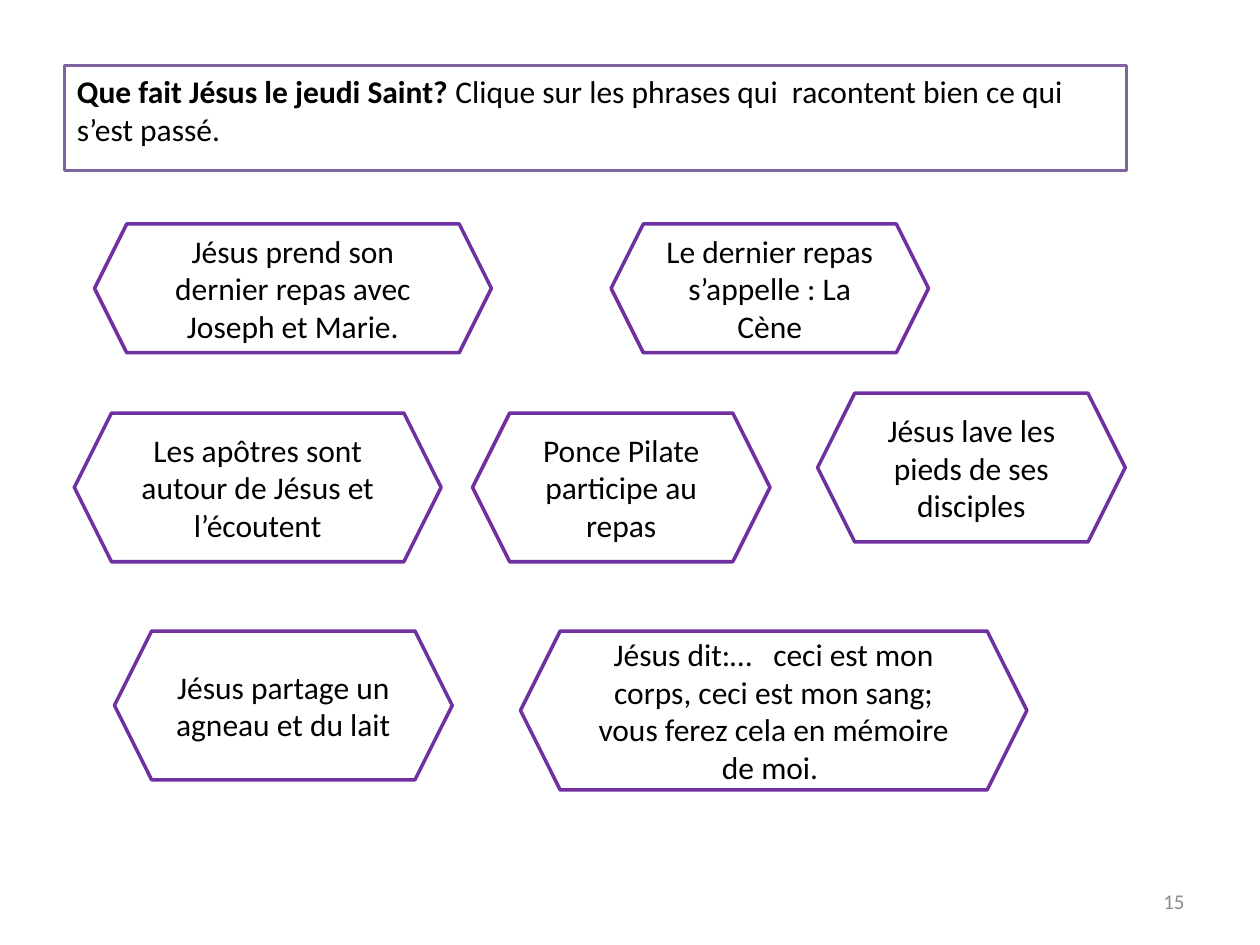
from dataclasses import dataclass

from pptx import Presentation
from pptx.dml.color import RGBColor
from pptx.enum.shapes import MSO_SHAPE
from pptx.enum.text import MSO_ANCHOR, MSO_AUTO_SIZE, PP_ALIGN
from pptx.shapes.autoshape import Shape
from pptx.slide import Slide
from pptx.util import Pt

HEXAGON = MSO_SHAPE.HEXAGON
TOP, MIDDLE = MSO_ANCHOR.TOP, MSO_ANCHOR.MIDDLE
LEFT, CENTER, RIGHT = PP_ALIGN.LEFT, PP_ALIGN.CENTER, PP_ALIGN.RIGHT
TITLE_ONLY = 5
FONT = "Calibri"
BLACK, WHITE, GREY = "000000", "FFFFFF", "8C8C8C"
PURPLE, SOFT_PURPLE = "7030A0", "8064A2"
ROW_1, ROW_2, ROW_3 = 128.0, 236.0, 360.6
LOW, MEDIUM, HIGH = 73.6, 85.0, 90.8


@dataclass
class Statement:
    text: str
    left: float
    top: float
    width: float
    height: float


STATEMENTS = [
    Statement("Jésus prend son dernier repas avec Joseph et Marie.", 54, ROW_1, 226.8, LOW),
    Statement("Le dernier repas s’appelle : La Cène", 349.2, ROW_1, 181.4, LOW),
    Statement("Les apôtres sont autour de Jésus et l’écoutent", 42.5, ROW_2, 209.6, MEDIUM),
    Statement("Jésus lave les pieds de ses disciples", 467.2, 224.7, 175.8, MEDIUM),
    Statement("Ponce Pilate participe au repas", 270, ROW_2, 170, MEDIUM),
    Statement("Jésus partage un agneau et du lait", 65.4, ROW_3, 193, MEDIUM),
    Statement(
        "Jésus dit:…   ceci est mon corps, ceci est mon sang; "
        "vous ferez cela en mémoire de moi. ",
        297.4, ROW_3, 289.4, HIGH,
    ),
]


def color(value: str) -> RGBColor:
    return RGBColor.from_string(value)


def outline(shape: Shape, line_color: str) -> None:
    shape.fill.solid()
    shape.fill.fore_color.rgb = color(WHITE)
    shape.line.color.rgb = color(line_color)
    shape.line.width = Pt(2)


def format_text(shape: Shape, size: float, font_color: str,
                alignment: PP_ALIGN, anchor: MSO_ANCHOR) -> None:
    frame = shape.text_frame
    frame.word_wrap = True
    frame.vertical_anchor = anchor
    for para in frame.paragraphs:
        para.alignment = alignment
        for span in para.runs:
            span.font.name = FONT
            span.font.size = Pt(size)
            span.font.color.rgb = color(font_color)


def add_question(page: Slide) -> None:
    title = page.shapes.title
    title.left, title.top, title.width, title.height = Pt(36.8), Pt(37.5), Pt(607), Pt(50.9)
    outline(title, SOFT_PURPLE)
    para = title.text_frame.paragraphs[0]
    for text, bold in (
        ("Que fait Jésus le jeudi Saint? ", True),
        ("Clique sur les phrases qui  racontent bien ce qui s’est passé.", False),
    ):
        span = para.add_run()
        span.text = text
        span.font.bold = bold
    format_text(title, 18, BLACK, LEFT, TOP)
    title.text_frame.auto_size = MSO_AUTO_SIZE.SHAPE_TO_FIT_TEXT


def add_statement(page: Slide, statement: Statement) -> None:
    hexagon = page.shapes.add_shape(
        HEXAGON, Pt(statement.left), Pt(statement.top),
        Pt(statement.width), Pt(statement.height),
    )
    hexagon.shadow.inherit = False
    outline(hexagon, PURPLE)
    hexagon.text_frame.text = statement.text
    format_text(hexagon, 18, BLACK, CENTER, MIDDLE)


def add_page_number(page: Slide, number: str) -> None:
    box = page.shapes.add_textbox(Pt(516), Pt(500.5), Pt(168), Pt(28.75))
    box.text_frame.text = number
    format_text(box, 12, GREY, RIGHT, MIDDLE)


def main() -> None:
    deck = Presentation()
    deck.slide_width, deck.slide_height = Pt(720), Pt(540)
    page = deck.slides.add_slide(deck.slide_layouts[TITLE_ONLY])
    add_question(page)
    for statement in STATEMENTS:
        add_statement(page, statement)
    add_page_number(page, "15")
    deck.save("out.pptx")


if __name__ == "__main__":
    main()
